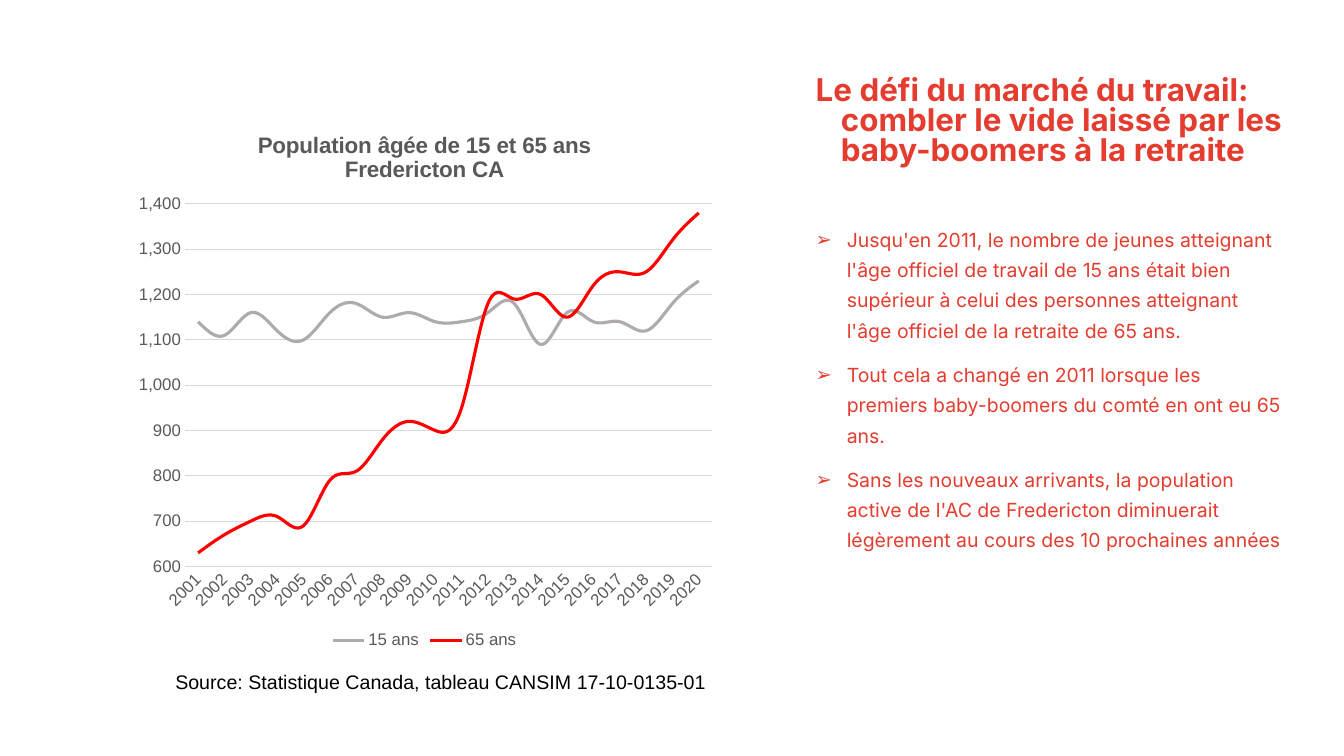
from dataclasses import dataclass

from pptx import Presentation
from pptx.chart.data import CategoryChartData
from pptx.dml.color import RGBColor
from pptx.enum.chart import XL_CHART_TYPE as ChartType
from pptx.enum.chart import XL_LEGEND_POSITION as LegendPosition
from pptx.enum.chart import XL_TICK_MARK as TickMark
from pptx.enum.text import MSO_ANCHOR as Anchor
from pptx.enum.text import MSO_AUTO_SIZE as AutoSize
from pptx.enum.text import PP_ALIGN as Align
from pptx.oxml import parse_xml
from pptx.oxml.ns import nsdecls, qn
from pptx.util import Inches, Pt


@dataclass(frozen=True)
class Theme:
    accent: str = "E43D30"
    black: str = "000000"
    label: str = "595959"
    grid: str = "D9D9D9"
    youth: str = "AFABAB"
    senior: str = "FF0000"
    text_font: str = "Inter"
    chart_font: str = "Arial"
    title_size: float = 22.4
    body_size: float = 13.9
    source_size: float = 14
    chart_title_size: float = 16
    label_size: float = 12
    grid_width: float = 0.75
    series_width: float = 2.25


THEME = Theme()

TITLE = ("Le défi du marché du travail: combler le vide laissé par les "
         "baby-boomers à la retraite")
FINDINGS = [
    "Jusqu'en 2011, le nombre de jeunes atteignant l'âge officiel de travail "
    "de 15 ans était bien supérieur à celui des personnes atteignant l'âge "
    "officiel de la retraite de 65 ans.",
    "Tout cela a changé en 2011 lorsque les premiers baby-boomers du comté "
    "en ont eu 65 ans.",
    "Sans les nouveaux arrivants, la population active de l'AC de Fredericton "
    "diminuerait légèrement au cours des 10 prochaines années",
]
SOURCE = "Source: Statistique Canada, tableau CANSIM 17-10-0135-01"
CHART_TITLE = "Population âgée de 15 et 65 ans\nFredericton CA"
YEARS = [str(year) for year in range(2001, 2021)]
POPULATION = {
    "15 ans": (THEME.youth, [
        1140, 1110, 1160, 1120, 1100, 1160, 1180, 1150, 1160, 1140,
        1140, 1160, 1180, 1090, 1160, 1140, 1140, 1120, 1180, 1230]),
    "65 ans": (THEME.senior, [
        630, 670, 700, 710, 690, 790, 810, 880, 920, 900,
        950, 1180, 1190, 1200, 1150, 1220, 1250, 1250, 1320, 1380]),
}


def apply(target, values):
    for name, value in values.items():
        setattr(target, name, value)


def style_font(font, name, size, color, bold=False):
    apply(font, {"name": name, "size": Pt(size), "bold": bold})
    font.color.rgb = RGBColor.from_string(color)


def style_line(line, color, width):
    line.color.rgb = RGBColor.from_string(color)
    line.width = Pt(width)


def prepare_frame(frame):
    apply(frame, {
        "word_wrap": True, "auto_size": AutoSize.NONE,
        "vertical_anchor": Anchor.TOP,
        "margin_left": Inches(0.1), "margin_right": Inches(0.1),
        "margin_top": Inches(0.05), "margin_bottom": Inches(0.05),
    })


def hang(paragraph, left, first):
    properties = paragraph._p.get_or_add_pPr()
    properties.set("marL", str(Inches(left)))
    properties.set("indent", str(Inches(first)))
    return properties


def add_title(slide, left, top, width, height):
    title = slide.shapes.title
    apply(title, {"left": Inches(left), "top": Inches(top),
                  "width": Inches(width), "height": Inches(height)})
    prepare_frame(title.text_frame)
    title.text_frame.text = TITLE
    paragraph = title.text_frame.paragraphs[0]
    hang(paragraph, 0.5, -0.25)
    apply(paragraph, {"alignment": Align.LEFT, "line_spacing": 0.8,
                      "space_before": Pt(0)})
    style_font(paragraph.runs[0].font, THEME.text_font, THEME.title_size,
               THEME.accent, True)


def add_findings(slide, left, top, width, height):
    frame = slide.shapes.add_textbox(
        Inches(left), Inches(top), Inches(width), Inches(height)).text_frame
    prepare_frame(frame)
    frame.text = "\n".join(FINDINGS)
    for index, paragraph in enumerate(frame.paragraphs):
        properties = hang(paragraph, 0.56, -0.31)
        apply(paragraph, {"line_spacing": 1.3,
                          "space_before": Pt(10 if index else 0)})
        for bullet in (
            f'<a:buClr {nsdecls("a")}><a:srgbClr val="{THEME.accent}"/></a:buClr>',
            f'<a:buFont {nsdecls("a")} typeface="{THEME.chart_font}"/>',
            f'<a:buChar {nsdecls("a")} char="➢"/>',
        ):
            properties.append(parse_xml(bullet))
        style_font(paragraph.runs[0].font, THEME.text_font, THEME.body_size,
                   THEME.accent)


def add_source(slide, left, top, width, height):
    frame = slide.shapes.add_textbox(
        Inches(left), Inches(top), Inches(width), Inches(height)).text_frame
    prepare_frame(frame)
    frame.text = SOURCE
    style_font(frame.paragraphs[0].runs[0].font, THEME.chart_font,
               THEME.source_size, THEME.black)


def place_plot(chart, x, y, w, h):
    plot_area = chart._chartSpace.chart.plotArea
    old_layout = plot_area.find(qn("c:layout"))
    if old_layout is not None:
        plot_area.remove(old_layout)
    plot_area.insert(0, parse_xml(
        f'<c:layout {nsdecls("c")}><c:manualLayout>'
        '<c:layoutTarget val="inner"/>'
        '<c:xMode val="edge"/><c:yMode val="edge"/>'
        f'<c:x val="{x}"/><c:y val="{y}"/><c:w val="{w}"/><c:h val="{h}"/>'
        '</c:manualLayout></c:layout>'))


def add_population_chart(slide, left, top, width, height):
    data = CategoryChartData(number_format="#,##0")
    data.categories = YEARS
    for name, (_, values) in POPULATION.items():
        data.add_series(name, values)
    chart = slide.shapes.add_chart(
        ChartType.LINE, Inches(left), Inches(top), Inches(width),
        Inches(height), data).chart
    style_font(chart.font, THEME.chart_font, THEME.label_size, THEME.label)
    place_plot(chart, 0.1, 0.17, 0.88, 0.67)

    # Title and legend
    apply(chart, {"has_title": True, "has_legend": True})
    chart.chart_title.include_in_layout = False
    heading = chart.chart_title.text_frame
    heading.text = CHART_TITLE
    for paragraph in heading.paragraphs:
        style_font(paragraph.runs[0].font, THEME.chart_font,
                   THEME.chart_title_size, THEME.label, True)
    apply(chart.legend, {"position": LegendPosition.BOTTOM,
                         "include_in_layout": False})

    # Axes
    years, people = chart.category_axis, chart.value_axis
    for axis in (years, people):
        apply(axis, {"major_tick_mark": TickMark.NONE,
                     "minor_tick_mark": TickMark.NONE})
        style_font(axis.tick_labels.font, THEME.chart_font, THEME.label_size,
                   THEME.label)
    years._element.find(qn("c:txPr")).find(qn("a:bodyPr")).set("rot", "-2700000")
    style_line(years.format.line, THEME.grid, THEME.grid_width)
    apply(people, {"minimum_scale": 600, "maximum_scale": 1400,
                   "major_unit": 100, "has_major_gridlines": True})
    people.format.line.fill.background()
    style_line(people.major_gridlines.format.line, THEME.grid, THEME.grid_width)
    apply(people.tick_labels, {"number_format": "#,##0",
                               "number_format_is_linked": False})

    # Age groups
    chart.plots[0].vary_by_categories = False
    for series in chart.plots[0].series:
        series.smooth = True
        style_line(series.format.line, POPULATION[series.name][0],
                   THEME.series_width)


def main():
    deck = Presentation()
    apply(deck, {"slide_width": Inches(13.33), "slide_height": Inches(7.5)})
    slide = deck.slides.add_slide(deck.slide_layouts.get_by_name("Title Only"))
    add_title(slide, 7.74, 0.72, 5.09, 1.3)
    add_findings(slide, 7.74, 2.14, 5.09, 4.33)
    add_population_chart(slide, 1.24, 1.11, 5.94, 5.37)
    add_source(slide, 1.64, 6.6, 9.36, 0.34)
    deck.save("out.pptx")


if __name__ == "__main__":
    main()
